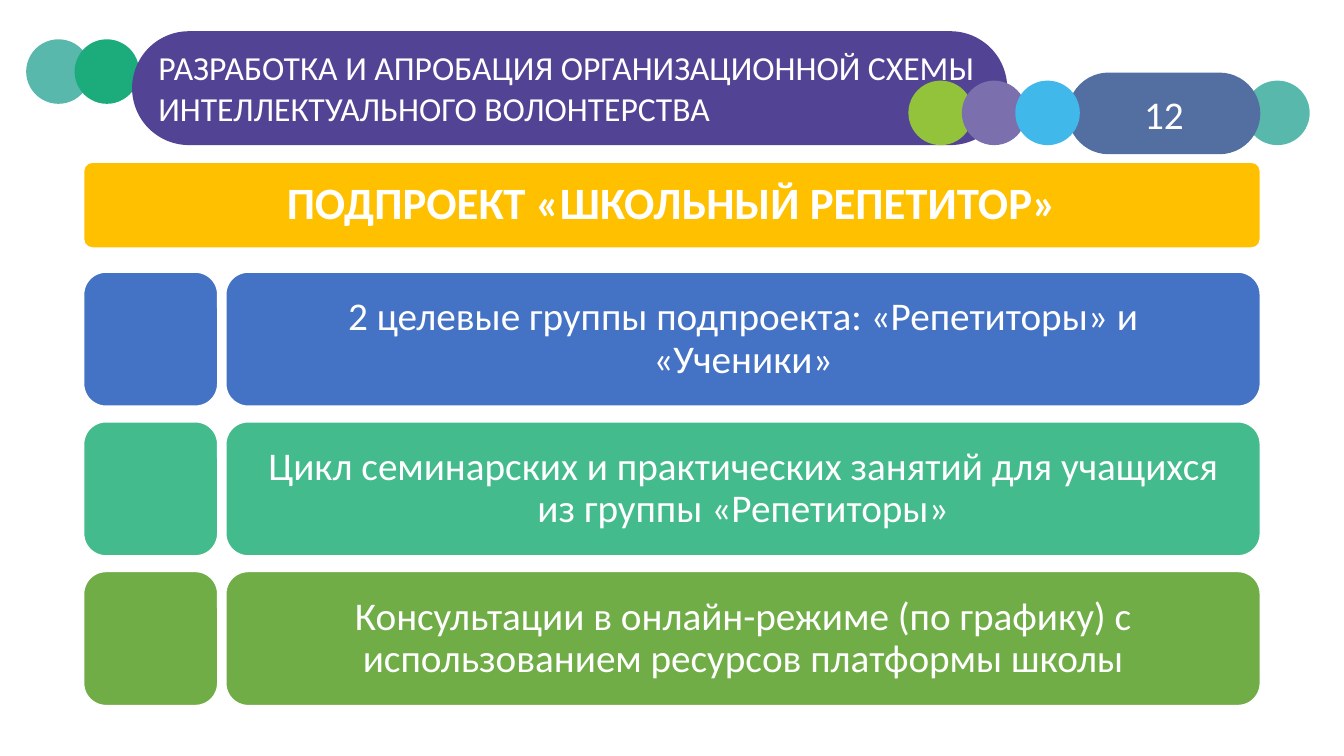
from pptx import Presentation
from pptx.dml.color import RGBColor
from pptx.enum.shapes import MSO_SHAPE
from pptx.enum.text import MSO_ANCHOR, MSO_AUTO_SIZE, PP_ALIGN
from pptx.util import Pt

OVAL = MSO_SHAPE.OVAL
ROUNDED = MSO_SHAPE.ROUNDED_RECTANGLE
TOP, MIDDLE = MSO_ANCHOR.TOP, MSO_ANCHOR.MIDDLE
LEFT, CENTER = PP_ALIGN.LEFT, PP_ALIGN.CENTER
NO_AUTOFIT = MSO_AUTO_SIZE.NONE

PX = 9144  # 100 px to the inch
THEME = {
    "font": "Calibri", "text": "FFFFFF", "outline": "FFFFFF",
    "title_pt": 24, "banner_pt": 32, "body_pt": 28,
    "title_pill": "534395", "number_pill": "536FA2", "banner": "FFC000",
    "teal": "58B8AB", "green": "1CAC7C",
    "lime": "93C23B", "violet": "7B6FAE", "sky": "40B8EA",
    "groups": "4472C4", "seminars": "43BB8D", "consulting": "70AD47",
}
DOT = 64
CARD_LEFT, CARD_RIGHT = 83, 1250
TILE, TILE_GAP = 133, 8
ROWS_TOP, ROW_PITCH = 270, 148.5


def add_filled(kind, left, top, width, height, colour, corner=None, outlined=False):
    shape = slide.shapes.add_shape(
        kind, *(round(v * PX) for v in (left, top, width, height)))
    shape.shadow.inherit = False
    shape.fill.solid()
    shape.fill.fore_color.rgb = RGBColor.from_string(THEME[colour])
    if corner is not None:
        shape.adjustments[0] = corner
    if outlined:
        shape.line.color.rgb = RGBColor.from_string(THEME["outline"])
        shape.line.width = Pt(1)
    else:
        shape.line.fill.background()
    return shape


def write(shape, text, size, align=CENTER, anchor=MIDDLE, spacing=0.9,
          inset=(10, 5), bold=False):
    """Fill the shape with one formatted paragraph; inset is (sides, top and bottom)."""
    frame = shape.text_frame
    frame.text = text
    frame.word_wrap = True
    frame.auto_size = NO_AUTOFIT
    frame.vertical_anchor = anchor
    frame.margin_left = frame.margin_right = inset[0] * PX
    frame.margin_top = frame.margin_bottom = inset[1] * PX
    paragraph = frame.paragraphs[0]
    paragraph.alignment = align
    paragraph.line_spacing = spacing
    paragraph.space_before = Pt(0)
    font = paragraph.runs[0].font
    font.name = THEME["font"]
    font.size = Pt(THEME[size])
    font.bold = bold
    font.color.rgb = RGBColor.from_string(THEME["text"])


deck = Presentation()
deck.slide_width, deck.slide_height = 1333 * PX, 750 * PX
slide = deck.slides.add_slide(deck.slide_layouts[5])

# Header: dots behind the pills, then the title, then dots in front
for left, top, colour in [(1235, 80, "teal"), (26, 39, "teal"), (74, 39, "green")]:
    add_filled(OVAL, left, top, DOT, DOT, colour)

number_pill = add_filled(ROUNDED, 1059, 72, 191, 81, "number_pill", 0.5)
write(number_pill, "12", "body_pt", spacing=1.0)

add_filled(ROUNDED, 131, 31, 868, 113, "title_pill", 0.5)
title = slide.shapes.title
title.left, title.top, title.width, title.height = 147 * PX, 42 * PX, 837 * PX, 91 * PX
write(title, "РАЗРАБОТКА И АПРОБАЦИЯ ОРГАНИЗАЦИОННОЙ СХЕМЫ ИНТЕЛЛЕКТУАЛЬНОГО ВОЛОНТЕРСТВА",
      "title_pt", LEFT, TOP, 1.0)
title.element.getparent().append(title.element)  # lift the title above its pill

for index, colour in enumerate(["lime", "violet", "sky"]):
    add_filled(OVAL, 901 + 53 * index, 80, DOT, DOT, colour)

# Banner
banner = add_filled(ROUNDED, CARD_LEFT, 161, CARD_RIGHT - CARD_LEFT, 85,
                    "banner", 0.1, outlined=True)
write(banner, "ПОДПРОЕКТ «ШКОЛЬНЫЙ РЕПЕТИТОР»", "banner_pt", bold=True)

# Rows: a square tile and a wide card
rows = [
    ("groups", "2 целевые группы подпроекта: «Репетиторы» и «Ученики»"),
    ("seminars", "Цикл семинарских и практических занятий для учащихся из группы «Репетиторы»"),
    ("consulting", "Консультации в онлайн-режиме (по графику) с использованием ресурсов платформы школы"),
]
card_left = CARD_LEFT + TILE + TILE_GAP
for index, (colour, text) in enumerate(rows):
    top = ROWS_TOP + ROW_PITCH * index
    add_filled(ROUNDED, CARD_LEFT, top, TILE, TILE, colour, 0.167, outlined=True)
    card = add_filled(ROUNDED, card_left, top, CARD_RIGHT - card_left, TILE,
                      colour, 0.167, outlined=True)
    write(card, text, "body_pt", inset=(22, 22))

deck.save("out.pptx")
